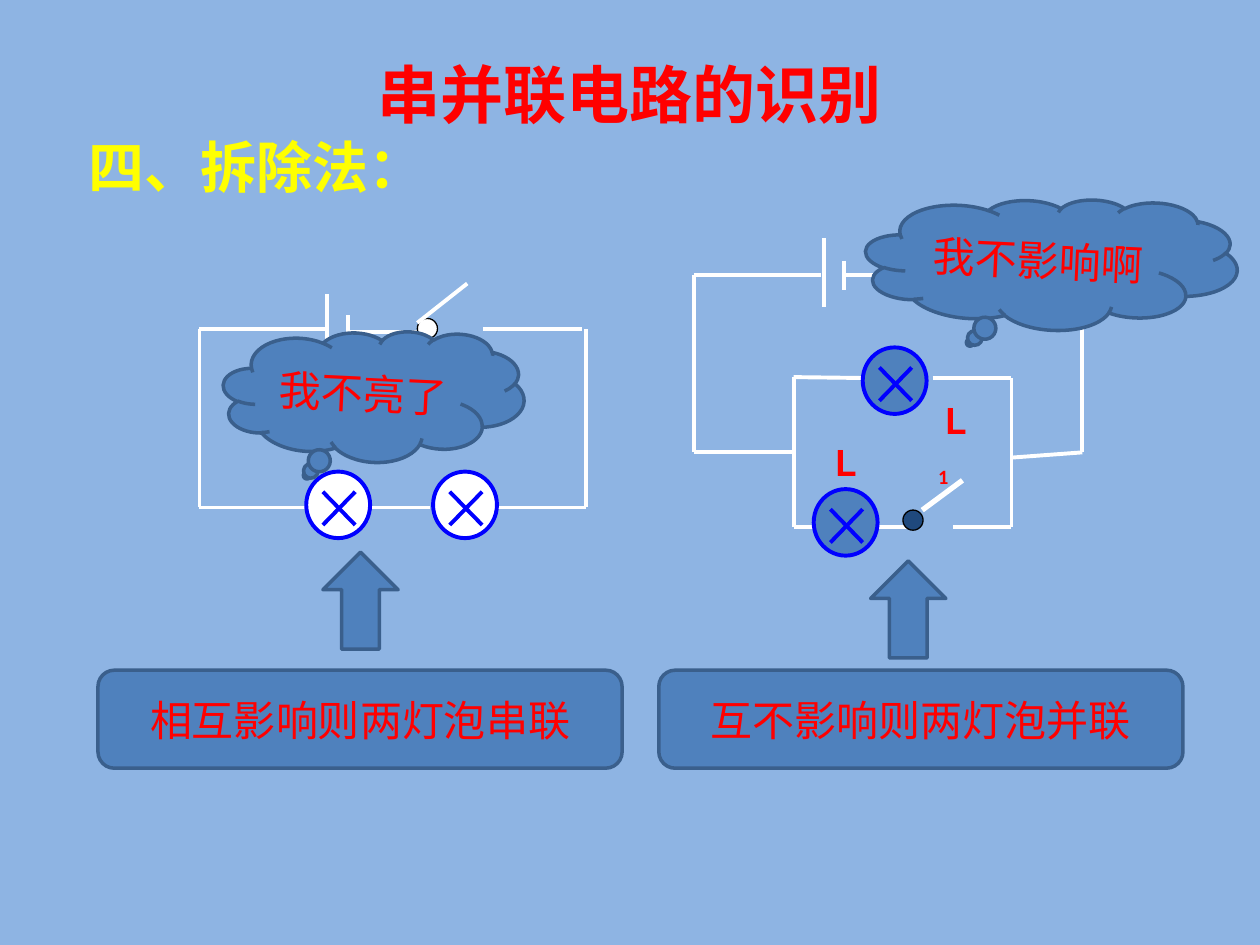
from lxml import etree
from pptx import Presentation
from pptx.dml.color import RGBColor
from pptx.enum.shapes import MSO_CONNECTOR as Link, MSO_SHAPE as Kind
from pptx.enum.text import MSO_ANCHOR as Anchor, PP_ALIGN as Align
from pptx.oxml.ns import qn
from pptx.util import Pt

rgb = RGBColor.from_string
NOTO = "Noto Sans CJK SC"
RED, BLUE, STEEL, EDGE, NAVY, WHITE = "FF0000", "0000FF", "4F81BD", "3A5F8C", "1F497D", "FFFFFF"


def draw(home, kind, box, fill, edge, width):
    shape = home.add_shape(kind, *map(Pt, box))
    shape.shadow.inherit = False
    shape.fill.solid()
    shape.fill.fore_color.rgb = rgb(fill)
    shape.line.color.rgb = rgb(edge)
    shape.line.width = Pt(width)
    return shape


def wire(home, ends, color=WHITE, width=2.25):
    link = home.add_connector(Link.STRAIGHT, *map(Pt, ends))
    link.line.color.rgb = rgb(color)
    link.line.width = Pt(width)
    etree.SubElement(link._element.spPr, qn("a:effectLst"))


deck = Presentation()
deck.slide_width, deck.slide_height = Pt(720), Pt(540)
slide = deck.slides.add_slide(deck.slide_layouts[6])
slide.background.fill.solid()
slide.background.fill.fore_color.rgb = rgb("8EB4E3")
shapes = slide.shapes
right = shapes.add_group_shape().shapes
texts = []

for ends in [
    (114, 188, 186, 188), (187, 168, 187, 207), (114, 188, 114, 290),
    (114, 290, 194, 290), (199, 180, 199, 197), (211, 290, 245.5, 290),
    (284, 290, 335, 290), (335, 290, 335, 188), (199, 189.5, 238.5, 189.5),
    (276, 188, 332.5, 188),
]:
    wire(shapes, ends)

for ends in [
    (396.5, 157, 469, 157), (471, 136, 471, 175.5), (396.5, 157, 396.5, 258.5),
    (396.5, 258.5, 453.5, 258.5), (482.5, 149, 482.5, 165.5),
    (578, 261.5, 618.5, 258.5), (618.5, 258.5, 618.5, 157),
    (453.5, 215.5, 453.5, 301), (453.5, 301, 471, 301), (453.5, 215.5, 493, 216),
    (533, 216, 578, 216), (487.5, 301, 522, 301), (578, 216, 578, 301),
    (482, 157, 533, 157), (567.5, 157, 618.5, 157), (544.5, 301, 578, 301),
]:
    wire(right, ends)

for home, x, y, fill, arm, width in [
    (shapes, 238.5, 182, WHITE, (238.5, 184.5, 267, 162), 2.25),
    (right, 533, 153.5, NAVY, (544.5, 153.5, 567.5, 136), 3),
    (right, 516, 291.5, NAVY, (527, 291.5, 550, 274.5), 3),
]:
    draw(home, Kind.OVAL, (x, y, 11.5, 11.5), fill, "000000", 0.75)
    wire(home, arm, WHITE, width)

for x, y, parts in [(529, 224.5, ["Ｌ", "1"]), (466.5, 248.5, ["Ｌ"])]:
    label = right.add_textbox(Pt(x), Pt(y), Pt(42), Pt(31))
    frame = label.text_frame
    frame.word_wrap = True
    frame.margin_right = Pt(12)
    texts.append((label, parts, 20, "Calibri", True, RED, Align.LEFT, Anchor.TOP))

for x, y, fill in [(175, 269.5, WHITE), (247.5, 269.5, WHITE), (493, 198.5, STEEL), (465, 279.5, STEEL)]:
    lamp = shapes.add_group_shape().shapes
    draw(lamp, Kind.OVAL, (x, y, 36.5, 38), fill, BLUE, 2.25)
    wire(lamp, (x + 28, y + 11.5, x + 9.5, y + 30.5), BLUE)
    wire(lamp, (x + 9.5, y + 11.5, x + 28, y + 30.5), BLUE)

for cloud, arrow, left, cry, rule in [
    ((127.5, 188.5, 172, 75.5), (184.5, 315.5), 56, "我不亮了", "相互影响则两灯泡串联"),
    ((494.5, 113, 212.5, 75.5), (497.5, 320.5), 376.5, "我不影响啊", "互不影响则两灯泡并联"),
]:
    puff = draw(shapes, Kind.CLOUD_CALLOUT, cloud, STEEL, EDGE, 2)
    puff.rotation = 2.7
    draw(shapes, Kind.UP_ARROW, (*arrow, 43, 55.5), STEEL, EDGE, 2)
    panel = draw(shapes, Kind.ROUNDED_RECTANGLE, (left, 383, 299.5, 56), STEEL, EDGE, 2)
    for shape, words in [(puff, cry), (panel, rule)]:
        texts.append((shape, [words], 24, NOTO, False, RED, Align.CENTER, Anchor.MIDDLE))

for box, words, size, font, color, align, anchor in [
    ((44, 18, 631.5, 70.5), "串并联电路的识别", 36, NOTO, RED, Align.CENTER, Anchor.MIDDLE),
    ((44, 80, 225.5, 44.5), "四、拆除法：", 32, "Calibri", "FFFF00", Align.LEFT, Anchor.TOP),
]:
    head = shapes.add_textbox(*map(Pt, box))
    frame = head.text_frame
    frame.word_wrap = True
    frame.margin_left = frame.margin_right = Pt(6.5)
    frame.margin_top = frame.margin_bottom = Pt(3)
    texts.append((head, [words], size, font, True, color, align, anchor))
frame.paragraphs[0].line_spacing = 0.8
frame.paragraphs[0].space_before = Pt(6.4)

for shape, parts, size, font, bold, color, align, anchor in texts:
    frame = shape.text_frame
    frame.vertical_anchor = anchor
    para = frame.paragraphs[0]
    para.alignment = align
    for part in parts:
        run = para.add_run()
        run.text = part
        run.font.size = Pt(size)
        run.font.name = font
        run.font.bold = bold
        run.font.color.rgb = rgb(color)
        props = run.font._element
        etree.SubElement(props, qn("a:ea"), typeface=NOTO)
        if part == "1":
            props.set("baseline", "-25000")

deck.save("out.pptx")
